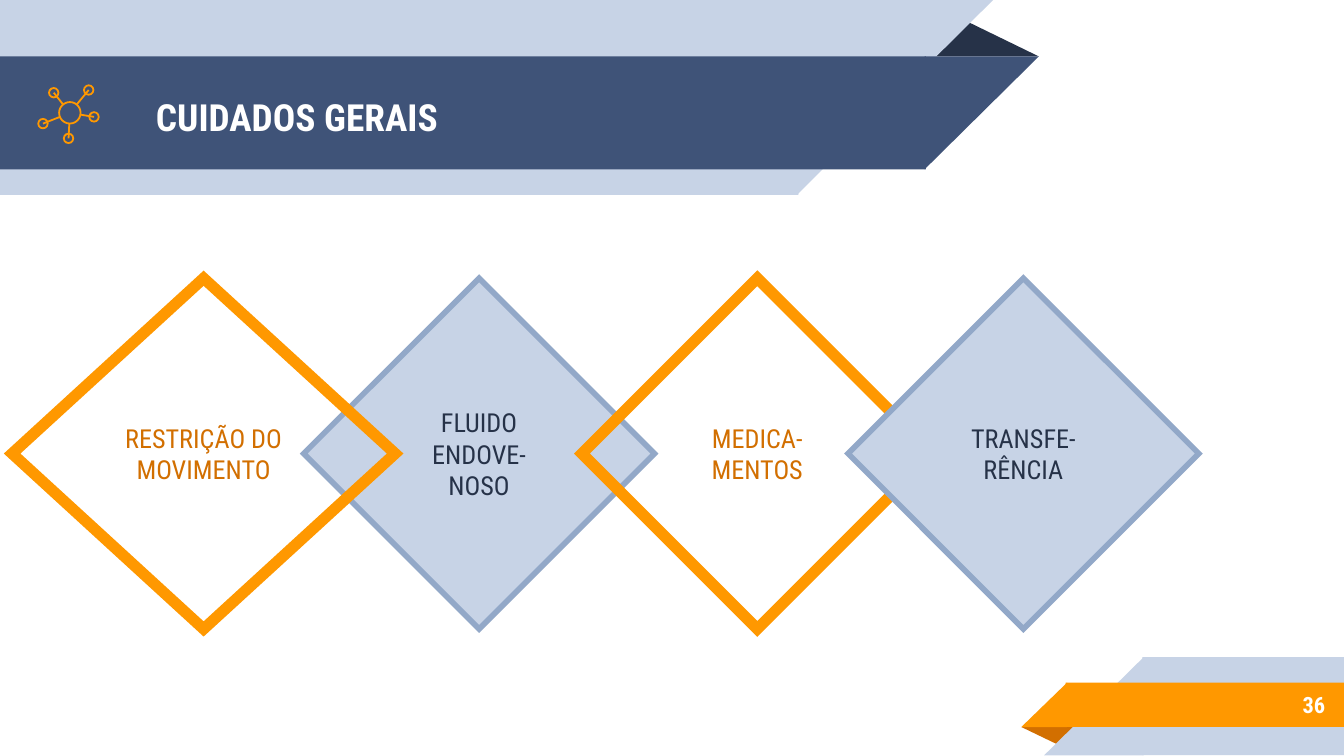
from dataclasses import dataclass
from math import hypot

from lxml import etree
from pptx import Presentation
from pptx.dml.color import RGBColor
from pptx.enum.shapes import MSO_CONNECTOR, MSO_SHAPE
from pptx.enum.text import MSO_ANCHOR, MSO_AUTO_SIZE, PP_ALIGN
from pptx.oxml.ns import qn
from pptx.util import Inches, Pt

RECT, CORNER, FOLD = MSO_SHAPE.RECTANGLE, MSO_SHAPE.RIGHT_TRIANGLE, MSO_SHAPE.ISOSCELES_TRIANGLE
DIAMOND, OVAL = MSO_SHAPE.DIAMOND, MSO_SHAPE.OVAL
STRAIGHT = MSO_CONNECTOR.STRAIGHT
LEFT, CENTER, RIGHT = PP_ALIGN.LEFT, PP_ALIGN.CENTER, PP_ALIGN.RIGHT
MIDDLE, NO_AUTOFIT = MSO_ANCHOR.MIDDLE, MSO_AUTO_SIZE.NONE


@dataclass(frozen=True)
class Theme:
    font: str = "Roboto Condensed"
    white: str = "FFFFFF"
    pale: str = "C7D3E6"
    steel: str = "92A8C8"
    blue: str = "3F5378"
    navy: str = "263248"
    orange: str = "FF9800"
    rust: str = "D26F00"
    title_size: float = 20
    step_size: float = 14
    number_size: float = 12
    icon_line: float = 0.96


THEME = Theme()
TITLE = "CUIDADOS GERAIS"
SLIDE_NUMBER = "36"

# style: fill, outline, outline width, text colour
FILLED = (THEME.pale, THEME.steel, 3, THEME.navy)
OUTLINED = (None, THEME.orange, 6, THEME.rust)

# text, left, width, style; back to front
STEPS_BEHIND = [
    ("FLUIDO ENDOVE-NOSO", 2.26, 2.61, FILLED),
    ("RESTRIÇÃO DO MOVIMENTO", 0.09, 2.85, OUTLINED),
    ("MEDICA-MENTOS", 4.33, 2.61, OUTLINED),
]
STEP_IN_FRONT = ("TRANSFE-RÊNCIA", 6.31, 2.61, FILLED)
STEP_TOP, STEP_HEIGHT = 2.07, 2.61

# straight edge length, top, height, colour
HEADER_BANDS = [(5.94, 0, 1.45, THEME.pale), (6.89, 0.42, 0.84, THEME.blue)]
FOOTER_BANDS = [(1.5, 4.89, 0.73, THEME.pale), (2.07, 5.08, 0.33, THEME.orange)]
SLIDE_WIDTH = 10
SLIDE_HEIGHT = SLIDE_WIDTH * 9 / 16
OVERLAP = 0.01  # hides the seam between a bar and its corner

HUB, HUB_RADIUS = (0.52, 0.84), 0.08
NODES = [(0.66, 0.67), (0.4, 0.69), (0.32, 0.92), (0.51, 1.03), (0.7, 0.87)]
NODE_RADIUS = 0.035


def color(code):
    return RGBColor.from_string(code)


def add_shape(slide, kind, box, fill=None, line=None, line_width=1):
    shape = slide.shapes.add_shape(kind, *map(Inches, box))
    shape.shadow.inherit = False
    if fill:
        shape.fill.solid()
        shape.fill.fore_color.rgb = color(fill)
    else:
        shape.fill.background()
    if line:
        shape.line.color.rgb = color(line)
        shape.line.width = Pt(line_width)
        etree.SubElement(shape._element.spPr.find(qn("a:ln")), qn("a:miter"), lim="800000")
    else:
        shape.line.fill.background()
    return shape


def write(shape, text, size, text_color, align, bold=False):
    frame = shape.text_frame
    frame.text = text
    frame.word_wrap = True
    frame.auto_size = NO_AUTOFIT
    frame.vertical_anchor = MIDDLE
    frame.margin_left = frame.margin_right = Inches(0.1)
    frame.margin_top = frame.margin_bottom = Inches(0.1)
    paragraph = frame.paragraphs[0]
    paragraph.alignment = align
    font = paragraph.runs[0].font
    font.name, font.size, font.bold = THEME.font, Pt(size), bold
    font.color.rgb = color(text_color)


def add_band(slide, length, top, height, fill, at_left):
    """Draw a bar from a slide edge, ending in a 45 degree corner."""
    bar_left = 0 if at_left else SLIDE_WIDTH - length
    corner_left = length - OVERLAP if at_left else bar_left - height
    add_shape(slide, RECT, (bar_left, top, length, height), fill)
    corner = add_shape(slide, CORNER, (corner_left, top, height + OVERLAP, height), fill)
    corner._element.spPr.xfrm.set("flipV" if at_left else "flipH", "1")


def add_fold(slide, box, fill, rotation=0):
    fold = add_shape(slide, FOLD, box, fill)
    fold.adjustments[0] = 0.324
    fold.rotation = rotation


def add_circle(slide, center, radius):
    x, y = center
    add_shape(slide, OVAL, (x - radius, y - radius, 2 * radius, 2 * radius),
              line=THEME.orange, line_width=THEME.icon_line)


def add_network_icon(slide):
    hub_x, hub_y = HUB
    add_circle(slide, HUB, HUB_RADIUS)
    for x, y in NODES:
        add_circle(slide, (x, y), NODE_RADIUS)
        reach = HUB_RADIUS / hypot(x - hub_x, y - hub_y)
        rim = (hub_x + (x - hub_x) * reach, hub_y + (y - hub_y) * reach)
        spoke = slide.shapes.add_connector(STRAIGHT, *map(Inches, (x, y, *rim)))
        spoke.line.color.rgb = color(THEME.orange)
        spoke.line.width = Pt(THEME.icon_line)
        etree.SubElement(spoke._element.spPr, qn("a:effectLst"))


def add_step(slide, text, left, width, style):
    fill, line, line_width, text_color = style
    box = (left, STEP_TOP, width, STEP_HEIGHT)
    step = add_shape(slide, DIAMOND, box, fill, line, line_width)
    write(step, text, THEME.step_size, text_color, CENTER)


def place_title(slide):
    title = slide.shapes.title
    title.left, title.top, title.width, title.height = map(Inches, (1.06, 0.45, 5.75, 0.84))
    write(title, TITLE, THEME.title_size, THEME.white, LEFT, bold=True)
    slide.shapes._spTree.append(title._element)  # in front of the header bands


def main():
    deck = Presentation()
    deck.slide_width, deck.slide_height = Inches(SLIDE_WIDTH), Inches(SLIDE_HEIGHT)
    slide = deck.slides.add_slide(deck.slide_layouts[5])

    add_fold(slide, (6.88, 0.14, 0.85, 0.28), THEME.navy)
    for band in HEADER_BANDS:
        add_band(slide, *band, at_left=True)
    add_fold(slide, (7.6, 5.41, 0.43, 0.14), THEME.rust, rotation=180)
    for band in FOOTER_BANDS:
        add_band(slide, *band, at_left=False)

    number = slide.shapes.add_textbox(*map(Inches, (8.33, 5.07, 1.63, 0.35)))
    write(number, SLIDE_NUMBER, THEME.number_size, THEME.white, RIGHT, bold=True)

    for step in STEPS_BEHIND:
        add_step(slide, *step)
    add_network_icon(slide)
    place_title(slide)
    add_step(slide, *STEP_IN_FRONT)
    deck.save("out.pptx")


if __name__ == "__main__":
    main()
